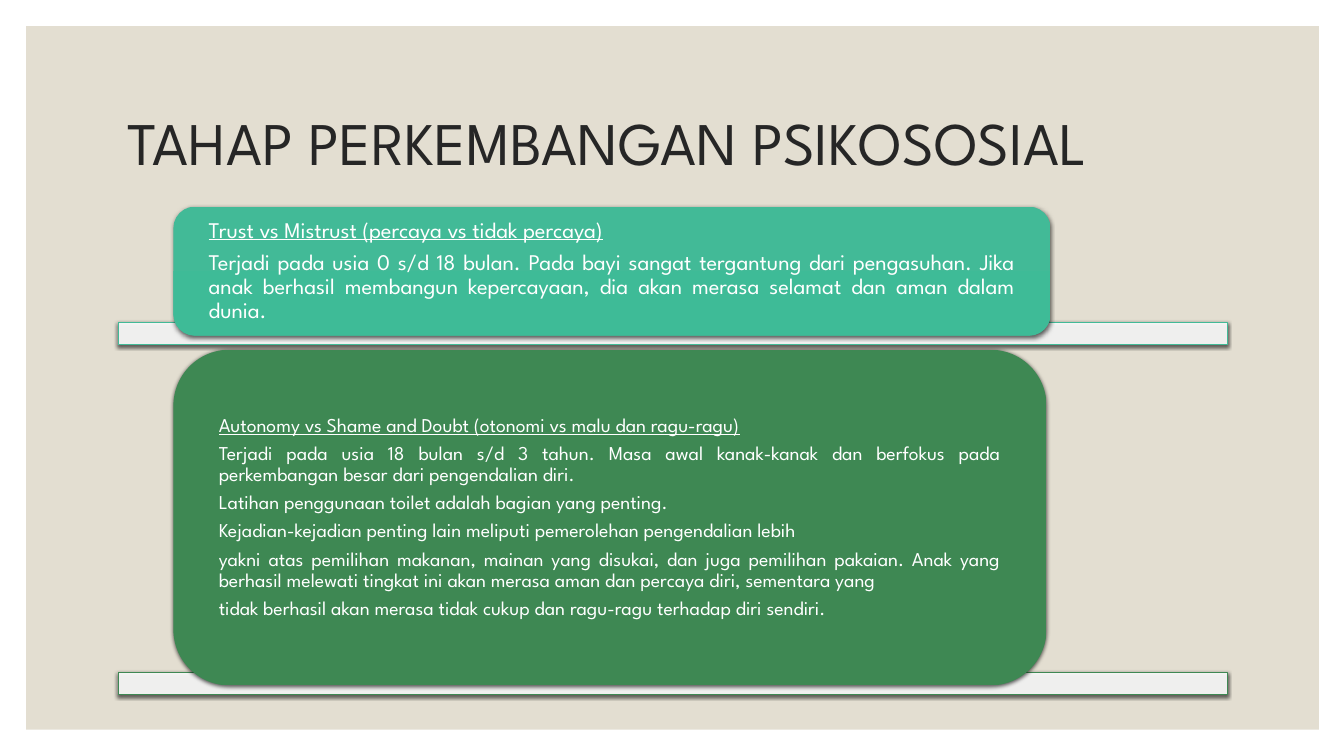
from lxml import etree
from pptx import Presentation
from pptx import util as u
from pptx.dml.color import RGBColor
from pptx.enum import shapes, text
from pptx.oxml.ns import qn

COLORS = {
    "panel": "E3DED1", "title": "262626", "white": "FFFFFF", "shadow": "000000",
    "trust": "42BA97", "trust_end": "3EBB97",
    "autonomy": "3E8853", "autonomy_end": "3C8951",
}
JUSTIFY, LEFT = text.PP_ALIGN.JUSTIFY, text.PP_ALIGN.LEFT


def write(paragraphs, box, size, color, inset=(0.1, 0.05), after=0,
          heading_align=LEFT, underline_heading=False):
    frame = slide.shapes.add_textbox(*map(u.Inches, box)).text_frame
    frame.word_wrap = True
    frame.vertical_anchor = text.MSO_ANCHOR.MIDDLE
    frame.margin_left = frame.margin_right = u.Inches(inset[0])
    frame.margin_top = frame.margin_bottom = u.Inches(inset[1])
    for i, words in enumerate(paragraphs):
        para = frame.paragraphs[0] if i == 0 else frame.add_paragraph()
        para.alignment = JUSTIFY if i else heading_align
        para.line_spacing = 0.9
        para.space_after = u.Pt(after)
        run = para.add_run()
        run.text = words
        run.font.name = "League Spartan"
        run.font.size = u.Pt(size)
        run.font.color.rgb = RGBColor.from_string(COLORS[color])
        run.font.underline = underline_heading and i == 0


def add_block(preset, box, color, shadow=True):
    block = slide.shapes.add_shape(preset, *map(u.Inches, box))
    block.fill.solid()
    block.fill.fore_color.rgb = RGBColor.from_string(COLORS[color])
    block.line.fill.background()
    block.shadow.inherit = False
    if shadow:
        effects = block._element.spPr.find(qn("a:effectLst"))
        outer = etree.SubElement(effects, qn("a:outerShdw"), blurRad=str(u.Pt(3)),
                                 dist=str(u.Pt(1)), dir="5400000", rotWithShape="0")
        tint = etree.SubElement(outer, qn("a:srgbClr"), val=COLORS["shadow"])
        etree.SubElement(tint, qn("a:alpha"), val="63000")
    return block


prs = Presentation()
prs.slide_width, prs.slide_height = u.Inches(13.33), u.Inches(7.5)
slide = prs.slides.add_slide(prs.slide_layouts[6])
RECT = shapes.MSO_SHAPE.RECTANGLE

add_block(RECT, (0.26, 0.26, 12.82, 6.98), "panel", shadow=False)
write(["TAHAP PERKEMBANGAN PSIKOSOSIAL"], (1.17, 0.7, 11, 1.5), 43.2, "title")

stages = [
    ("trust", 3.2, (1.72, 2.05, 8.7, 1.28), 0.06, 16, JUSTIFY, [
        "Trust vs Mistrust (percaya vs tidak percaya)",
        "Terjadi pada usia 0 s/d 18 bulan. Pada bayi sangat tergantung dari pengasuhan. "
        "Jika anak berhasil membangun kepercayaan, dia akan merasa selamat dan aman dalam dunia.",
    ]),
    ("autonomy", 6.67, (1.72, 3.47, 8.66, 3.33), 0.16, 14, LEFT, [
        "Autonomy vs Shame and Doubt (otonomi vs malu dan ragu-ragu)",
        "Terjadi pada usia 18 bulan s/d 3 tahun. Masa awal kanak-kanak dan berfokus pada "
        "perkembangan besar dari pengendalian diri.",
        "Latihan penggunaan toilet adalah bagian yang penting. ",
        "Kejadian-kejadian penting lain meliputi pemerolehan pengendalian lebih",
        "yakni atas pemilihan makanan, mainan yang disukai, dan juga pemilihan pakaian. "
        "Anak yang berhasil melewati tingkat ini akan merasa aman dan percaya diri, "
        "sementara yang",
        "tidak berhasil akan merasa tidak cukup dan ragu-ragu terhadap diri sendiri.",
    ]),
]

for stage, bar_top, card_box, pad, size, heading_align, paragraphs in stages:
    bar = add_block(RECT, (1.17, bar_top, 11, 0.22), "white")
    bar.line.color.rgb = RGBColor.from_string(COLORS[stage])
    bar.line.width = u.Pt(0.5)
    bar_color = bar._element.spPr.find(qn("a:solidFill"))[0]
    etree.SubElement(bar_color, qn("a:alpha"), val="90000")

    card = add_block(shapes.MSO_SHAPE.ROUNDED_RECTANGLE, card_box, stage)
    card.fill.gradient()
    card.fill.gradient_angle = 270
    for stop, shade in zip(card.fill.gradient_stops, (stage, stage + "_end")):
        stop.color.rgb = RGBColor.from_string(COLORS[shade])

    left, top, width, height = card_box
    write(paragraphs, (left + pad, top + pad, width - 2 * pad, height - 2 * pad),
          size, "white", inset=(0.29, 0), after=0.35 * size,
          heading_align=heading_align, underline_heading=True)

prs.save("out.pptx")
